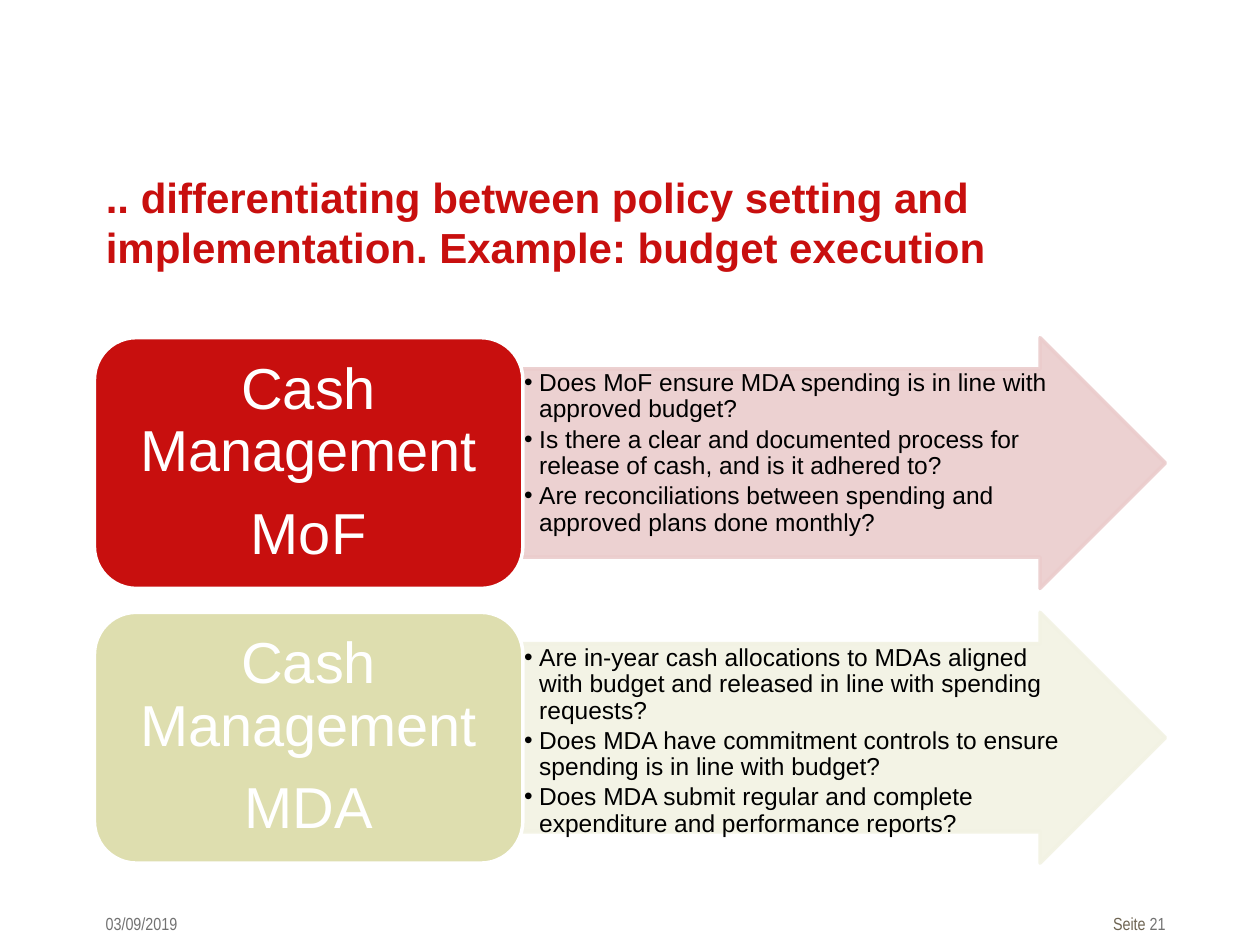
"""Build a slide that contrasts MoF and MDA cash management checks."""
from lxml.etree import SubElement
from pptx import Presentation
from pptx.dml.color import RGBColor
from pptx.enum.shapes import MSO_SHAPE
from pptx.enum.text import MSO_ANCHOR, MSO_AUTO_SIZE, PP_ALIGN
from pptx.oxml.ns import qn
from pptx.util import Inches, Pt

C = {"red": "C80F0E", "pink": "EBCCCC", "sand": "DEDEAF", "cream": "F2F2E3",
     "white": "FFFFFF", "black": "000000", "grey": "727272", "brown": "6E6452"}


def write(tf, paras, size, color, font="Arial", bold=False, align=PP_ALIGN.LEFT,
          anchor=MSO_ANCHOR.TOP, insets=(0.1, 0.05, 0.1, 0.05),
          spacing=None, after=0, bullet=False):
    tf.word_wrap = True
    tf.auto_size = MSO_AUTO_SIZE.NONE
    tf.vertical_anchor = anchor
    tf.margin_left, tf.margin_top, tf.margin_right, tf.margin_bottom = map(Inches, insets)
    for i, text in enumerate(paras):
        p = tf.add_paragraph() if i else tf.paragraphs[0]
        p.alignment = align
        p.space_after = Pt(after)
        if spacing:
            p.line_spacing = spacing
        if bullet:
            pPr = p._p.get_or_add_pPr()
            pPr.set("marL", str(Inches(0.12)))
            pPr.set("indent", str(-Inches(0.12)))
            SubElement(pPr, qn("a:buFont"), typeface="Arial")
            SubElement(pPr, qn("a:buChar"), char="•")
        r = p.add_run()
        r.text = text
        r.font.name, r.font.size, r.font.bold = font, Pt(size), bold
        r.font.color.rgb = RGBColor.from_string(C[color])


prs = Presentation()
prs.slide_width, prs.slide_height = Inches(10), Inches(7.5)
s = prs.slides.add_slide(prs.slide_layouts[5])

title = s.shapes.title
title.left, title.top, title.width, title.height = map(Inches, (0.74, 1.31, 8.5, 1.02))
write(title.text_frame,
      [".. differentiating between policy setting and implementation. "
       "Example: budget execution"], 24, "red", bold=True)

rows = [
    ("MoF", "red", "pink",
     ["Does MoF ensure MDA spending is in line with approved budget?",
      "Is there a clear and documented process for release of cash, and is it adhered to?",
      "Are reconciliations between spending and approved plans done monthly?"]),
    ("MDA", "sand", "cream",
     ["Are in-year cash allocations to MDAs aligned with budget and released "
      "in line with spending requests?",
      "Does MDA have commitment controls to ensure spending is in line with budget?",
      "Does MDA submit regular and complete expenditure and performance reports?"]),
]
left, top, width, height, pitch = 0.75, 2.68, 8.5, 1.99, 2.18
card_w = 0.4 * width

for i, (body, card_color, arrow_color, questions) in enumerate(rows):
    y = top + i * pitch
    arrow = s.shapes.add_shape(MSO_SHAPE.RIGHT_ARROW, Inches(left + card_w), Inches(y),
                               Inches(width - card_w), Inches(height))
    arrow.adjustments[0], arrow.adjustments[1] = 0.75, 0.5
    card = s.shapes.add_shape(MSO_SHAPE.ROUNDED_RECTANGLE, Inches(left), Inches(y),
                              Inches(card_w), Inches(height))
    for sp, fill, line in ((arrow, arrow_color, arrow_color), (card, card_color, "white")):
        sp.shadow.inherit = False
        sp.fill.solid()
        sp.fill.fore_color.rgb = RGBColor.from_string(C[fill])
        sp.line.color.rgb = RGBColor.from_string(C[line])
        sp.line.width = Pt(2)
    for clr in arrow._element.spPr.iter(qn("a:srgbClr")):
        SubElement(clr, qn("a:alpha"), val="90000")
    write(arrow.text_frame, questions, 14, "black", insets=(0.01,) * 4,
          spacing=0.9, after=2.1, bullet=True)
    write(card.text_frame, ["Cash Management", body], 33, "white", align=PP_ALIGN.CENTER,
          anchor=MSO_ANCHOR.MIDDLE, insets=(0.14, 0.07, 0.14, 0.07),
          spacing=0.9, after=11.55)

date = s.shapes.add_textbox(Inches(0.74), Inches(7.2), Inches(1.42), Inches(0.27))
write(date.text_frame, ["03/09/2019"], 10, "grey", font="Arial Narrow")

page = s.shapes.add_textbox(Inches(8.24), Inches(7.2), Inches(1.01), Inches(0.27))
write(page.text_frame, ["Seite "], 10, "brown", font="Arial Narrow",
      align=PP_ALIGN.RIGHT, insets=(0.1, 0.05, 0, 0.05))
r = page.text_frame.paragraphs[0].add_run()
r.text = "21"
r.font.name, r.font.size = "Arial Narrow", Pt(10)
r.font.color.rgb = RGBColor.from_string(C["grey"])

prs.save("out.pptx")
